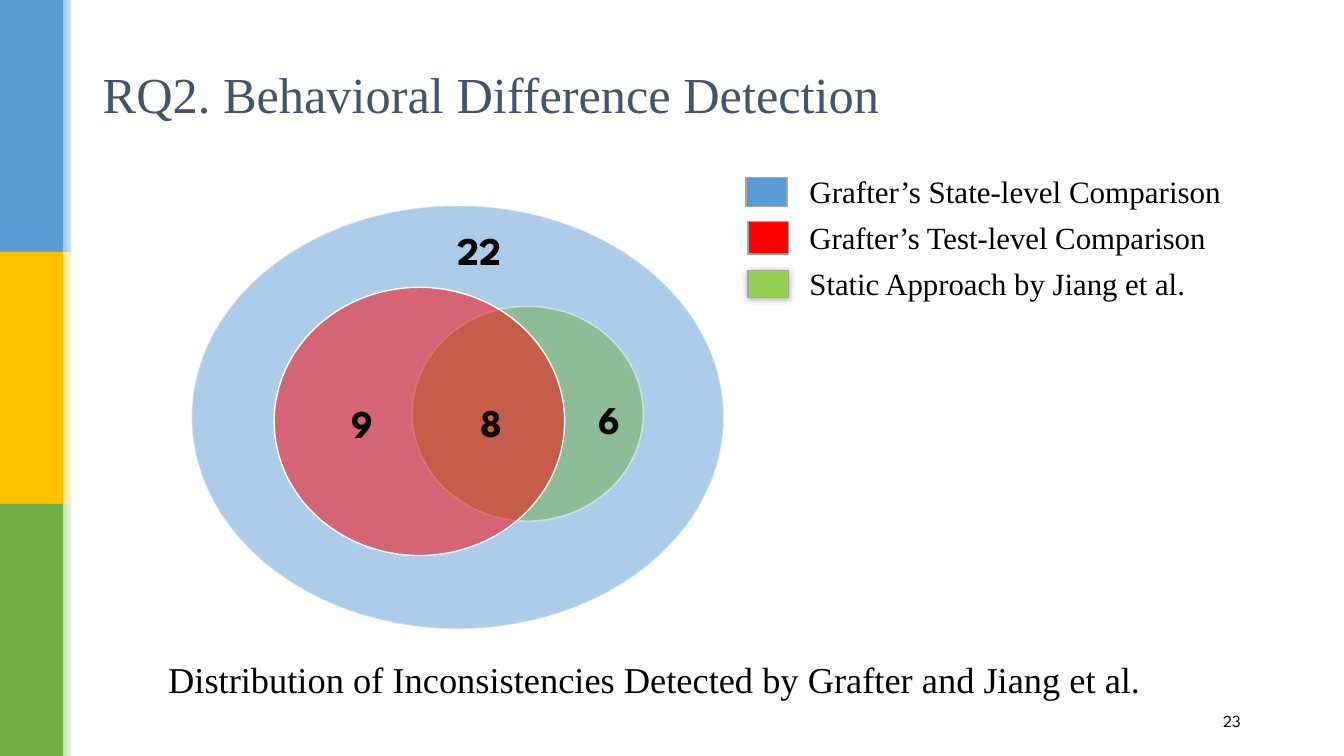
from lxml.etree import SubElement
from pptx import Presentation
from pptx.dml.color import RGBColor
from pptx.enum.shapes import MSO_SHAPE
from pptx.enum.text import MSO_ANCHOR, PP_ALIGN
from pptx.oxml import parse_xml
from pptx.oxml.ns import qn
from pptx.util import Cm, Pt

NS = 'xmlns:a="http://schemas.openxmlformats.org/drawingml/2006/main"'
SERIF = "Times New Roman"
SANS = "League Spartan"
WIDE, HIGH = 33.87, 19.05


def color(text):
    return RGBColor.from_string(text)


def fade(fill, alpha):
    """Set the opacity, in percent, of a solid fill."""
    tone = fill._xPr.find(qn("a:solidFill"))[0]
    SubElement(tone, qn("a:alpha"), val=str(alpha * 1000))


def add_form(slide, kind, box, fill, line=None, alpha=100, edge=100):
    form = slide.shapes.add_shape(kind, *map(Cm, box))
    form.shadow.inherit = False
    form.fill.solid()
    form.fill.fore_color.rgb = color(fill)
    if alpha < 100:
        fade(form.fill, alpha)
    if line:
        form.line.color.rgb = color(line)
        form.line.width = Pt(1)
        if edge < 100:
            fade(form.line.fill, edge)
    else:
        form.line.fill.background()
    return form


def add_text(slide, text, box, size, font=SERIF, tone="000000", bold=False,
             align=PP_ALIGN.LEFT, anchor=MSO_ANCHOR.TOP, space=1.0,
             wrap=True, rim=None):
    frame = slide.shapes.add_textbox(*map(Cm, box)).text_frame
    frame.word_wrap = wrap
    frame.vertical_anchor = anchor
    para = frame.paragraphs[0]
    para.alignment = align
    para.line_spacing = space
    run = para.add_run()
    run.text = text
    run.font.size = Pt(size)
    run.font.name = font
    run.font.bold = bold
    run.font.color.rgb = color(tone)
    if rim:
        run.font._element.insert(0, parse_xml(
            f'<a:ln {NS} w="9525"><a:solidFill><a:srgbClr val="{rim}"/>'
            '</a:solidFill></a:ln>'))


def add_side(slide, left, top, width, height):
    """Three colour bands, each with a strip fading to white."""
    band, part = width * 0.8, height / 3
    tones = [("5B9BD5", "9DC3E6"), ("FFC000", "FFE699"), ("70AD47", "C5E0B4")]
    for row, (dark, pale) in enumerate(tones):
        y = top + row * part
        add_form(slide, MSO_SHAPE.RECTANGLE, (left, y, band, part), dark)
        strip = add_form(slide, MSO_SHAPE.RECTANGLE,
                         (left + band, y, width - band, part), pale)
        strip.fill.gradient()
        strip.fill.gradient_angle = 0
        for stop, tone in zip(strip.fill.gradient_stops, (pale, "FFFFFF")):
            stop.color.rgb = color(tone)
    add_form(slide, MSO_SHAPE.RECTANGLE,
             (left + 1.8, top, 0.13, height), "FFFFFF")


def add_venn(slide, left, top, width, height):
    rings = [
        (0, 0, width, height, "5B9BD5", 50),
        (5.56, 2.54, 5.82, 5.41, "70AD47", 50),
        (2.08, 2.06, 7.32, 6.76, "FF0000", 100),
    ]
    for x, y, w, h, fill, edge in rings:
        add_form(slide, MSO_SHAPE.OVAL, (left + x, top + y, w, h), fill,
                 line="FFFFFF", alpha=50, edge=edge)
    counts = [("8", 7.04, 4.72, 1.07), ("6", 10.01, 4.65, 1.07),
              ("9", 3.78, 4.75, 1.07), ("22", 6.45, 0.41, 1.63)]
    for text, x, y, w in counts:
        add_text(slide, text, (left + x, top + y, w, 1.45), 28, font=SANS,
                 bold=True, wrap=False, rim="DEEBF7")


def add_legend(slide, left, top, width, step):
    rows = [
        ("Grafter’s State-level Comparison", "5B9BD5", 0, 0.15, 1.04, 0.74, 22.2),
        ("Grafter’s Test-level Comparison", "FF0000", 0.05, 0.1, 1.02, 0.81, 22),
        ("Static Approach by Jiang et al.", "92D050", 0.05, 0.15, 1.02, 0.69, 22),
    ]
    for row, (text, fill, x, y, w, h, size) in enumerate(rows):
        line = top + row * step
        key = add_form(slide, MSO_SHAPE.RECTANGLE,
                       (left + x, line + y, w, h), fill, line="A5A5A5")
        add_text(slide, text, (left + 1.35, line, width - 1.35, 1.19), size,
                 space=0.9)
    glow = key._element.spPr.find(qn("a:effectLst"))
    glow.append(parse_xml(
        f'<a:outerShdw {NS} blurRad="63500" dist="12700" dir="5400000">'
        '<a:srgbClr val="000000"><a:alpha val="32000"/></a:srgbClr>'
        '</a:outerShdw>'))


def main():
    deck = Presentation()
    deck.slide_width, deck.slide_height = Cm(WIDE), Cm(HIGH)
    slide = deck.slides.add_slide(deck.slide_layouts[6])
    add_side(slide, 0, 0, 1.98, HIGH)
    add_venn(slide, 4.83, 5.18, 13.41, 10.67)
    add_legend(slide, 18.8, 4.32, 13.56, 1.17)
    add_text(slide, "RQ2. Behavioral Difference Detection",
             (2.34, 1.02, 29.21, 2.84), 36, tone="44546A",
             anchor=MSO_ANCHOR.MIDDLE, space=0.9)
    add_text(slide, "Distribution of Inconsistencies Detected by Grafter "
             "and Jiang et al.", (3.99, 16.56, 26.64, 1.47), 26, space=0.9)
    add_text(slide, "23", (22.43, 17.65, 9.09, 1.02), 12, font=SANS,
             align=PP_ALIGN.RIGHT, anchor=MSO_ANCHOR.MIDDLE)
    deck.save("out.pptx")


if __name__ == "__main__":
    main()
